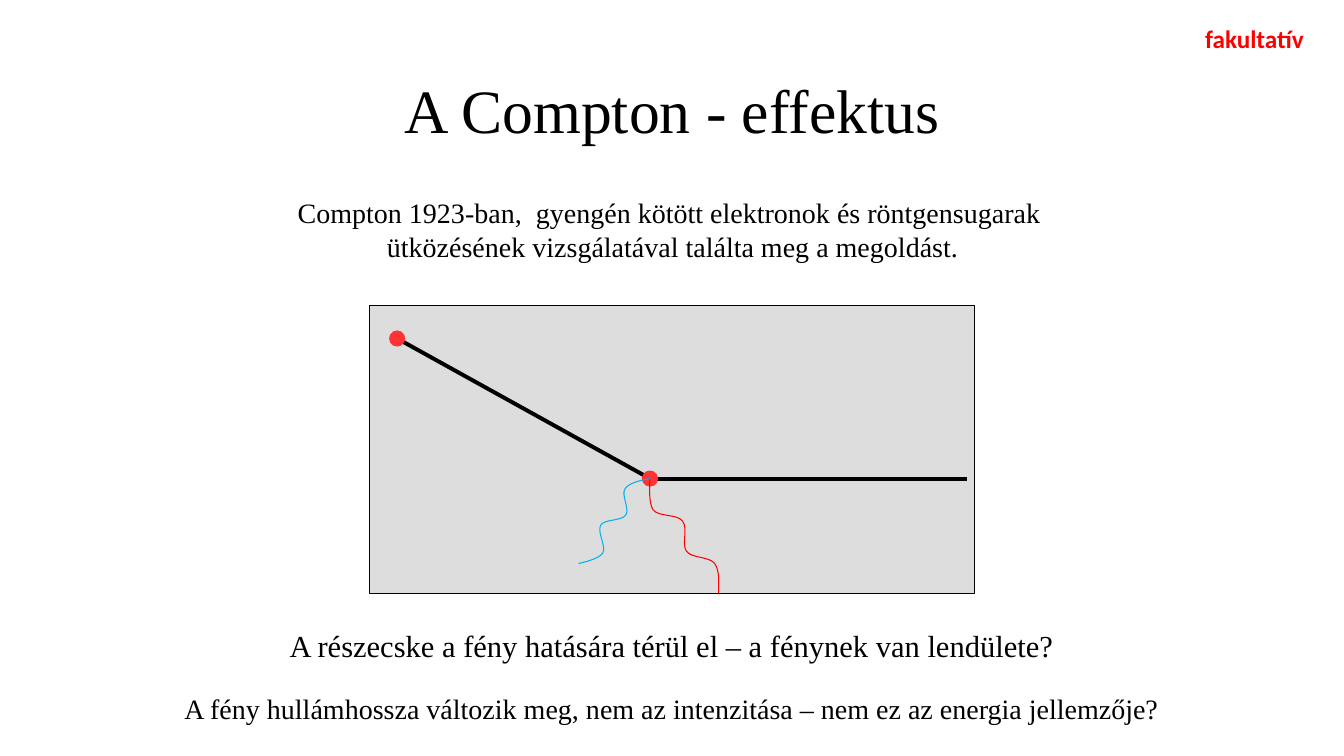
from dataclasses import dataclass

from pptx import Presentation
from pptx.dml.color import RGBColor
from pptx.enum.shapes import MSO_CONNECTOR, MSO_SHAPE
from pptx.enum.text import MSO_ANCHOR, MSO_AUTO_SIZE, PP_ALIGN
from pptx.oxml.ns import qn
from pptx.util import Cm, Pt


@dataclass(frozen=True)
class Theme:
    serif: str = "Times New Roman"
    sans: str = "Calibri"
    black: str = "000000"
    red: str = "FF0000"
    blue: str = "00B0F0"
    ball: str = "FF3333"
    panel: str = "DDDDDD"
    title_size: float = 44
    question_size: float = 21.8
    body_size: float = 20
    tag_size: float = 18
    thin: float = 0.75
    thick: float = 2.83


THEME = Theme()
SERIF = {"name": THEME.serif, "color": THEME.black, "bold": False}
TAG = {"name": THEME.sans, "color": THEME.red, "bold": True}

TITLE = "A Compton - effektus"
TITLE_AREA = (2.34, 1.02, 29.21, 3.68)
TEXTS = [
    (["Compton 1923-ban,  gyengén kötött elektronok és röntgensugarak ",
      "ütközésének vizsgálatával találta meg a megoldást."],
     (7.19, 4.8, 19.53, 1.96), PP_ALIGN.CENTER, SERIF | {"size": THEME.body_size}),
    (["A részecske a fény hatására térül el – a fénynek van lendülete?"],
     (6.99, 15.67, 19.89, 1.19), PP_ALIGN.CENTER, SERIF | {"size": THEME.question_size}),
    (["A fény hullámhossza változik meg, nem az intenzitása – nem ez az energia jellemzője?"],
     (4.32, 17.3, 25.22, 1.12), PP_ALIGN.CENTER, SERIF | {"size": THEME.body_size}),
    (["fakultatív"], (30.12, 0.46, 3.02, 1.02), PP_ALIGN.LEFT, TAG | {"size": THEME.tag_size}),
]

PANEL_AREA = (9.32, 7.7, 15.24, 7.26)
BALL_SIZE = 0.38
DEFLECTED = (10.01, 8.53)
COLLISION = (16.38, 12.06)
SOURCE = (24.38, 12.06)
WAVES = [
    (THEME.blue, [
        (16.36, 12.06),
        (16.1, 12.12), (15.85, 12.17), (15.75, 12.32),
        (15.65, 12.47), (15.88, 12.83), (15.77, 12.98),
        (15.67, 13.13), (15.24, 13.08), (15.14, 13.23),
        (15.04, 13.41), (15.29, 13.77), (15.19, 13.94),
        (15.09, 14.1), (14.58, 14.2), (14.58, 14.2)]),
    (THEME.red, [
        (18.11, 14.96),
        (18.11, 14.66), (18.14, 14.38), (18.01, 14.2),
        (17.88, 14.02), (17.42, 14.07), (17.3, 13.89),
        (17.17, 13.72), (17.35, 13.31), (17.2, 13.13),
        (17.07, 12.95), (16.61, 13.03), (16.46, 12.85),
        (16.33, 12.67), (16.38, 12.09), (16.38, 12.09)]),
]


def lengths(values):
    return [Cm(value) for value in values]


def set_line(shape, color, width):
    shape.line.color.rgb = RGBColor.from_string(color)
    shape.line.width = Pt(width)


def write(para, text, style):
    span = para.add_run()
    span.text = text
    formats = {"name": style["name"], "size": Pt(style["size"]), "bold": style["bold"]}
    for name, value in formats.items():
        setattr(span.font, name, value)
    span.font.color.rgb = RGBColor.from_string(style["color"])


def add_title(page):
    title = page.shapes.title
    for name, value in zip(("left", "top", "width", "height"), lengths(TITLE_AREA)):
        setattr(title, name, value)
    title.text_frame.vertical_anchor = MSO_ANCHOR.MIDDLE
    para = title.text_frame.paragraphs[0]
    para.alignment = PP_ALIGN.CENTER
    para.line_spacing = 0.9
    write(para, TITLE, SERIF | {"size": THEME.title_size})


def add_text(page, lines, area, alignment, style):
    frame = page.shapes.add_textbox(*lengths(area)).text_frame
    frame.word_wrap = False
    frame.auto_size = MSO_AUTO_SIZE.SHAPE_TO_FIT_TEXT
    for index, line in enumerate(lines):
        para = frame.add_paragraph() if index else frame.paragraphs[0]
        para.alignment = alignment
        write(para, line, style)


def add_solid(page, kind, area, fill, line):
    shape = page.shapes.add_shape(kind, *lengths(area))
    shape.shadow.inherit = False
    shape.fill.solid()
    shape.fill.fore_color.rgb = RGBColor.from_string(fill)
    set_line(shape, line, THEME.thin)


def add_track(page, start, end):
    track = page.shapes.add_connector(MSO_CONNECTOR.STRAIGHT, *lengths(start + end))
    properties = track._element.spPr
    set_line(track, THEME.black, THEME.thick)
    properties.append(properties.makeelement(qn("a:effectLst"), {}))


def add_wave(page, color, points):
    start, *rest = [lengths(point) for point in points]
    builder = page.shapes.build_freeform(*start, scale=1.0)
    builder.add_line_segments(rest, close=False)
    wave = builder.convert_to_shape()
    wave.shadow.inherit = False
    wave.fill.background()
    set_line(wave, color, THEME.thin)
    segments = list(wave._element.iter(qn("a:lnTo")))
    for index in range(0, len(segments), 3):
        first, *others = segments[index:index + 3]
        first.tag = qn("a:cubicBezTo")
        for segment in others:
            first.append(segment[0])
            segment.getparent().remove(segment)


def main():
    deck = Presentation()
    deck.slide_width, deck.slide_height = Cm(33.87), Cm(19.05)
    page = deck.slides.add_slide(deck.slide_layouts.get_by_name("Title Only"))
    add_title(page)
    add_solid(page, MSO_SHAPE.RECTANGLE, PANEL_AREA, THEME.panel, THEME.black)
    for end in (SOURCE, DEFLECTED):
        add_track(page, COLLISION, end)
    for x, y in (DEFLECTED, COLLISION):
        area = (x - BALL_SIZE / 2, y - BALL_SIZE / 2, BALL_SIZE, BALL_SIZE)
        add_solid(page, MSO_SHAPE.OVAL, area, THEME.ball, THEME.ball)
    for color, points in WAVES:
        add_wave(page, color, points)
    for entry in TEXTS:
        add_text(page, *entry)
    deck.save("out.pptx")


if __name__ == "__main__":
    main()
